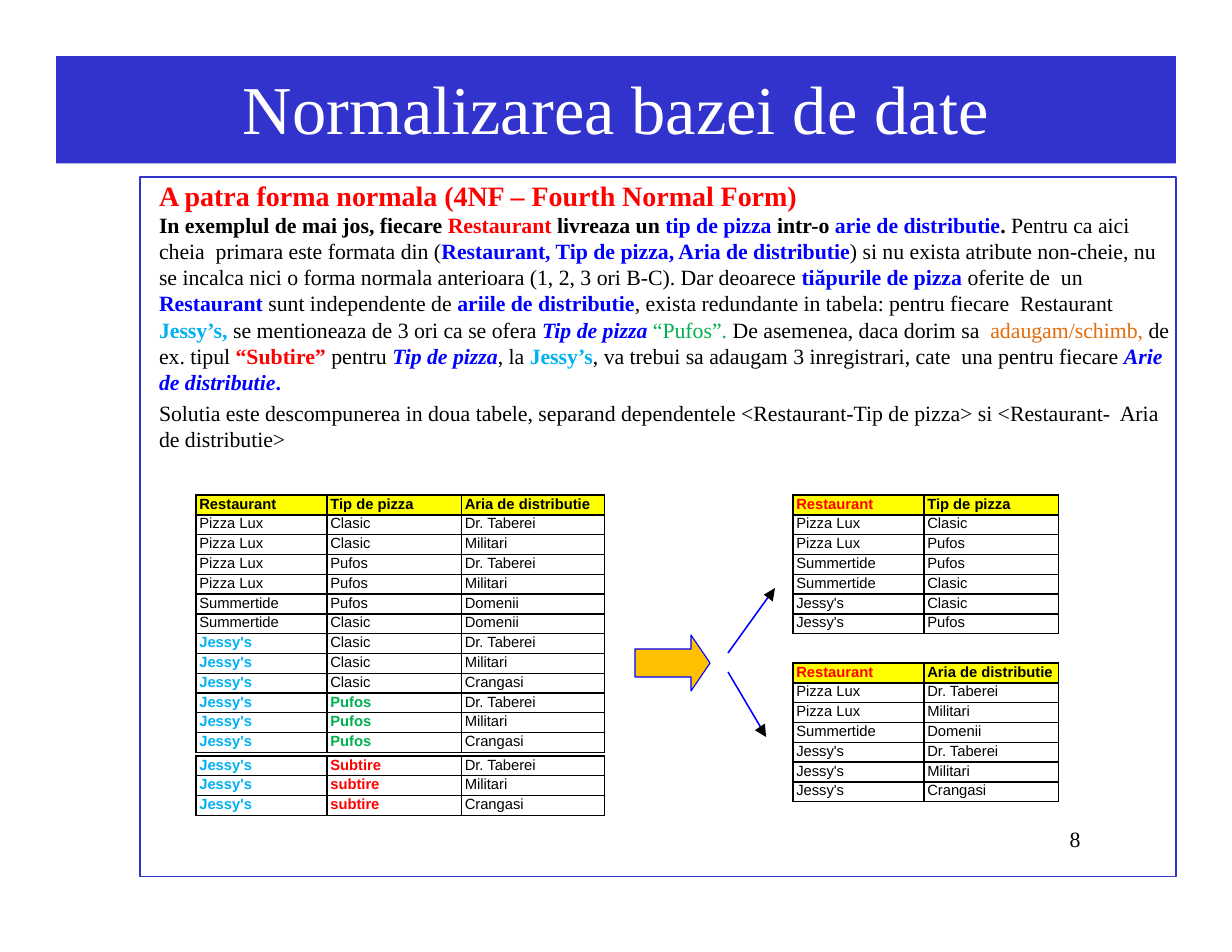
from lxml import etree
from pptx import Presentation
from pptx.dml.color import RGBColor
from pptx.enum.shapes import MSO_CONNECTOR, MSO_SHAPE
from pptx.enum.text import MSO_ANCHOR, MSO_AUTO_SIZE, PP_ALIGN
from pptx.oxml.ns import qn
from pptx.util import Inches, Pt

WHITE = RGBColor(0xFF, 0xFF, 0xFF)
BLACK = RGBColor(0, 0, 0)
INDIGO = RGBColor(0x32, 0x32, 0xCC)
BLUE = RGBColor(0, 0, 0xFF)
RED = RGBColor(0xFF, 0, 0)
CYAN = RGBColor(0, 0xB0, 0xF0)
GREEN = RGBColor(0, 0xB0, 0x50)
ORANGE = RGBColor(0xE4, 0x6C, 0x0A)
AMBER = RGBColor(0xFF, 0xC0, 0)
YELLOW = RGBColor(0xFF, 0xFF, 0)
SERIF = "Times New Roman"


def add_run(p, text, size=14, font=SERIF, color=BLACK, bold=False, italic=False, spacing=0):
    """Append a run; spacing is in hundredths of a point."""
    r = p.add_run()
    r.text = text
    r.font.size = Pt(size)
    r.font.name = font
    r.font.color.rgb = color
    r.font.bold = bold
    r.font.italic = italic
    if spacing:
        r._r.get_or_add_rPr().set("spc", str(spacing))
    return r


def add_borders(cell):
    tcPr = cell._tc.get_or_add_tcPr()
    for i, side in enumerate(("lnL", "lnR", "lnT", "lnB")):
        ln = etree.Element(qn(f"a:{side}"), w=str(Pt(1)))
        fill = etree.SubElement(ln, qn("a:solidFill"))
        etree.SubElement(fill, qn("a:srgbClr"), val=str(BLACK))
        tcPr.insert(i, ln)


prs = Presentation()
prs.slide_width, prs.slide_height = Inches(11), Inches(8.5)
s = prs.slides.add_slide(prs.slide_layouts[5])

# Title band
title = s.shapes.title
title.left, title.top, title.width, title.height = (Inches(v) for v in (0.5, 0.5, 10, 0.96))
title.fill.solid()
title.fill.fore_color.rgb = INDIGO
tf = title.text_frame
tf.auto_size = MSO_AUTO_SIZE.NONE
tf.vertical_anchor = MSO_ANCHOR.TOP
tf.margin_left = tf.margin_right = tf.margin_bottom = 0
tf.margin_top = Inches(0.09)
p = tf.paragraphs[0]
p.alignment = PP_ALIGN.CENTER
add_run(p, "Normalizarea bazei de date", size=44, color=WHITE, spacing=-3)

# Content frame
frame = s.shapes.add_shape(MSO_SHAPE.RECTANGLE, Inches(1.25), Inches(1.58), Inches(9.25), Inches(6.25))
frame.shadow.inherit = False
frame.fill.background()
frame.line.color.rgb = INDIGO
frame.line.width = Pt(0.72)

# Explanation
PLAIN = {}
STRONG = {"bold": True}
KEY = {"color": BLUE, "bold": True}
KEY_ITALIC = {"color": BLUE, "bold": True, "italic": True}
HOT = {"color": RED, "bold": True}
NAME = {"color": CYAN, "bold": True}
HEADING = {"color": RED, "bold": True, "size": 18}

paragraphs = [
    (0, [("A patra forma normala (4NF – Fourth Normal Form)", HEADING)]),
    (0, [
        ("In exemplul de mai jos, fiecare ", STRONG),
        ("Restaurant ", HOT),
        ("livreaza un ", STRONG),
        ("tip de pizza ", KEY),
        ("intr-o ", STRONG),
        ("arie de distributie", KEY),
        (". ", STRONG),
        ("Pentru ca aici cheia  primara este formata din (", PLAIN),
        ("Restaurant, Tip de pizza, Aria de distributie", KEY),
        (") si nu exista atribute non-cheie, nu  se incalca nici o forma normala "
         "anterioara (1, 2, 3 ori B-C). Dar deoarece ", PLAIN),
        ("tiăpurile de pizza ", KEY),
        ("oferite de  un ", PLAIN),
        ("Restaurant ", KEY),
        ("sunt independente de ", PLAIN),
        ("ariile de distributie", KEY),
        (", exista redundante in tabela: pentru fiecare  Restaurant ", PLAIN),
        ("Jessy’s, ", NAME),
        ("se mentioneaza de 3 ori ca se ofera ", PLAIN),
        ("Tip de pizza ", KEY_ITALIC),
        ("“Pufos”. ", {"color": GREEN}),
        ("De asemenea, daca dorim sa  ", PLAIN),
        ("adaugam/schimb, ", {"color": ORANGE}),
        ("de ex. tipul ", PLAIN),
        ("“Subtire” ", HOT),
        ("pentru ", PLAIN),
        ("Tip de pizza", KEY_ITALIC),
        (", la ", PLAIN),
        ("Jessy’s", NAME),
        (", va trebui sa adaugam 3 inregistrari, cate  una pentru fiecare ", PLAIN),
        ("Arie de distributie", KEY_ITALIC),
        (".", KEY),
    ]),
    (3.2, [("Solutia este descompunerea in doua tabele, separand dependentele "
            "<Restaurant-Tip de pizza> si <Restaurant-  Aria de distributie>", PLAIN)]),
]
body = s.shapes.add_textbox(Inches(1.42), Inches(1.58), Inches(9.07), Inches(2.48))
tf = body.text_frame
tf.word_wrap = True
tf.margin_left = tf.margin_right = tf.margin_bottom = 0
tf.margin_top = Inches(0.01)
for i, (before, runs) in enumerate(paragraphs):
    p = tf.add_paragraph() if i else tf.paragraphs[0]
    if before:
        p.space_before = Pt(before)
    for text, style in runs:
        add_run(p, text, spacing=-3, **style)

# Tables: left, top, column widths, header, rows, highlighted or not
LUX, SUMMER, JESSY = "Pizza Lux", "Summertide", "Jessy's"
TABERE, MILITARI, DOMENII, CRANGASI = "Dr. Taberei", "Militari", "Domenii", "Crangasi"
AREAS = (TABERE, MILITARI, CRANGASI)
REST, TYPE, AREA = "Restaurant", "Tip de pizza", "Aria de distributie"
WIDE, NARROW = (1.17, 1.2, 1.28), (1.17, 1.2)
ROW_H = 2.3 / 13

all_rows = [(LUX, kind, area) for kind in ("Clasic", "Pufos") for area in (TABERE, MILITARI)]
all_rows += [(SUMMER, kind, DOMENII) for kind in ("Pufos", "Clasic")]
all_rows += [(JESSY, kind, area) for kind in ("Clasic", "Pufos") for area in AREAS]
new_rows = [(JESSY, kind, area) for kind, area in zip(("Subtire", "subtire", "subtire"), AREAS)]
type_rows = [(LUX, "Clasic"), (LUX, "Pufos"), (SUMMER, "Pufos"),
             (SUMMER, "Clasic"), (JESSY, "Clasic"), (JESSY, "Pufos")]
area_rows = [(LUX, TABERE), (LUX, MILITARI), (SUMMER, DOMENII)]
area_rows += [(JESSY, area) for area in AREAS]

tables = [
    (1.75, 4.42, WIDE, (REST, TYPE, AREA), all_rows, True),
    (7.08, 4.42, NARROW, (REST, TYPE), type_rows, False),
    (7.08, 5.92, NARROW, (REST, AREA), area_rows, False),
    (1.75, 6.75, WIDE, None, new_rows, True),
]
HIGHLIGHTS = {JESSY: CYAN, "Pufos": GREEN, "Subtire": RED, "subtire": RED}

for left, top, widths, header, rows, highlighted in tables:
    lines = [header] + rows if header else rows
    table = s.shapes.add_table(len(lines), len(widths), Inches(left), Inches(top),
                               Inches(sum(widths)), Inches(ROW_H * len(lines))).table
    table.first_row = table.horz_banding = False
    for col, width in zip(table.columns, widths):
        col.width = Inches(width)
    for row, values in zip(table.rows, lines):
        row.height = Inches(ROW_H)
        for cell, text in zip(row.cells, values):
            color, bold = BLACK, values is header
            if values is header:
                if text == REST and not highlighted:
                    color = RED
            elif highlighted and values[0] == JESSY and text in HIGHLIGHTS:
                color, bold = HIGHLIGHTS[text], True
            cell.margin_left = Inches(0.03)
            cell.margin_right = cell.margin_top = cell.margin_bottom = 0
            if values is header:
                cell.fill.solid()
                cell.fill.fore_color.rgb = YELLOW
            else:
                cell.fill.background()
            add_borders(cell)
            p = cell.text_frame.paragraphs[0]
            p.line_spacing = Pt(11.1)
            add_run(p, text, size=9.5, font="Arial", color=color, bold=bold)

# Thin blue arrows with black heads
arrows = [
    ((6.5, 5.83), (6.86, 5.33), [(6.92, 5.25), (6.82, 5.31), (6.9, 5.37)]),
    ((6.5, 6), (6.79, 6.49), [(6.84, 6.58), (6.83, 6.46), (6.74, 6.52)]),
]
for start, end, head in arrows:
    line = s.shapes.add_connector(MSO_CONNECTOR.STRAIGHT, *(Inches(v) for v in start + end))
    line.line.color.rgb = BLUE
    line.line.width = Pt(1)
    etree.SubElement(line._element.spPr, qn("a:effectLst"))
    points = [(Inches(x), Inches(y)) for x, y in head]
    builder = s.shapes.build_freeform(*points[0])
    builder.add_line_segments(points[1:], close=True)
    sp = builder.convert_to_shape()
    sp.shadow.inherit = False
    sp.fill.solid()
    sp.fill.fore_color.rgb = BLACK
    sp.line.fill.background()

# Block arrow
sp = s.shapes.add_shape(MSO_SHAPE.RIGHT_ARROW, Inches(5.67), Inches(5.67), Inches(0.67), Inches(0.5))
sp.adjustments[1] = 0.34
sp.shadow.inherit = False
sp.fill.solid()
sp.fill.fore_color.rgb = AMBER
sp.line.color.rgb = BLUE
sp.line.width = Pt(0.72)

# Page number
number = s.shapes.add_textbox(Inches(9.51), Inches(7.41), Inches(0.18), Inches(0.22))
tf = number.text_frame
tf.margin_left = Inches(0.04)
tf.margin_right = tf.margin_top = tf.margin_bottom = 0
p = tf.paragraphs[0]
p.line_spacing = Pt(14.4)
add_run(p, "8")

prs.save("out.pptx")
